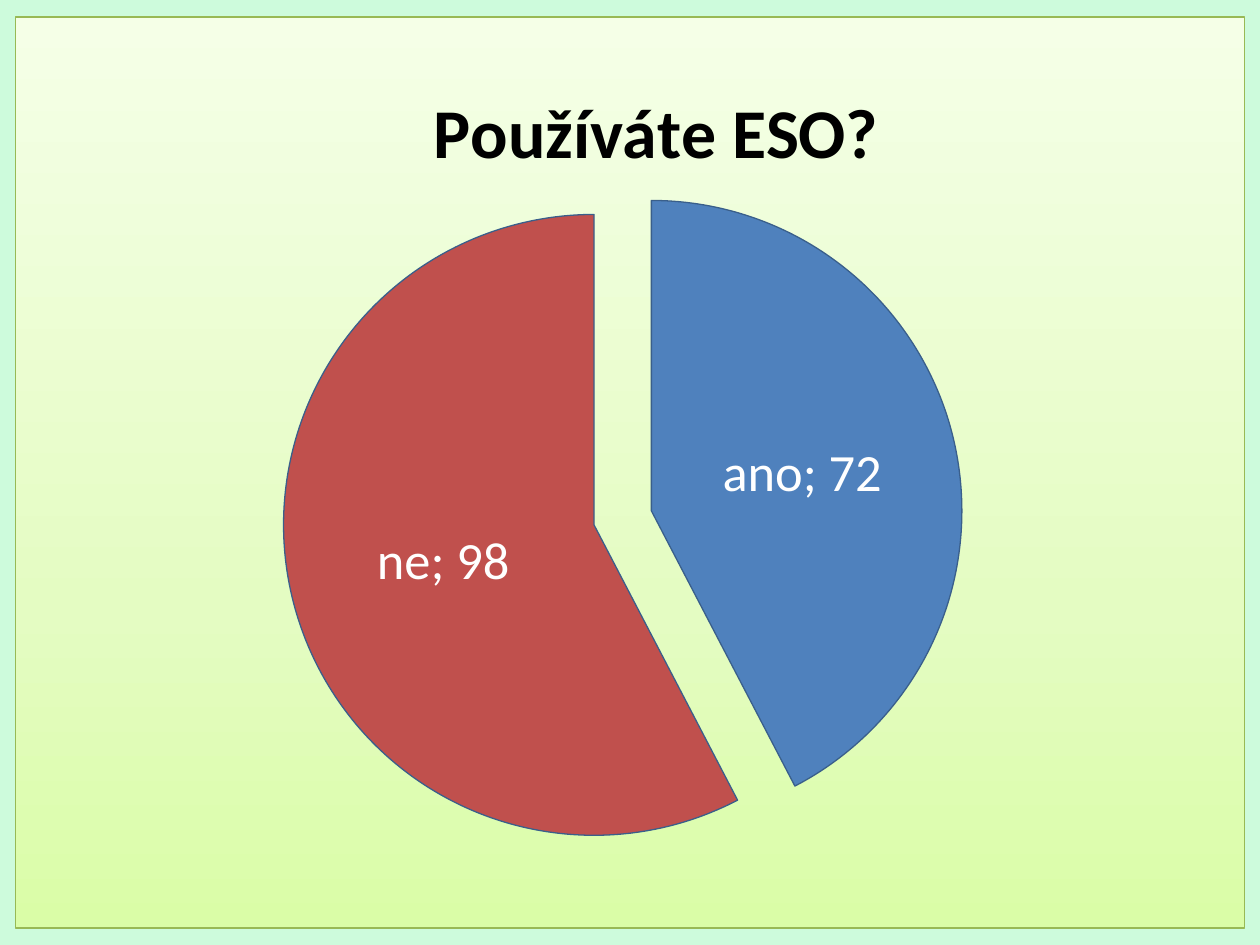
from dataclasses import dataclass

from pptx import Presentation
from pptx.chart.data import CategoryChartData
from pptx.dml.color import RGBColor
from pptx.enum.chart import XL_CHART_TYPE, XL_LABEL_POSITION
from pptx.oxml import parse_xml
from pptx.oxml.ns import qn
from pptx.util import Inches, Pt

PIE = XL_CHART_TYPE.PIE
CENTER = XL_LABEL_POSITION.CENTER
NAMESPACES = (
    'xmlns:c="http://schemas.openxmlformats.org/drawingml/2006/chart" '
    'xmlns:a="http://schemas.openxmlformats.org/drawingml/2006/main"'
)


@dataclass(frozen=True)
class Theme:
    font: str = "Calibri"
    background: str = "CDFBDC"
    text: str = "000000"
    label: str = "FFFFFF"
    slice_line: str = "3A5F8B"
    slices: tuple = ("4F81BD", "C0504D")
    panel_line: str = "98B955"
    panel_stops: tuple = ((0, "DAFDA7"), (35, "E4FCC2"), (100, "F5FFE7"))
    base_size: int = 10
    title_size: int = 40
    label_size: int = 30
    line_width: float = 0.75


THEME = Theme()


def color(value):
    return RGBColor.from_string(value)


def chart_xml(tag, content="", attributes=""):
    return parse_xml(f"<c:{tag} {NAMESPACES} {attributes}>{content}</c:{tag}>")


def manual_layout(x, y, size=None):
    """Layout in fractions of the chart; size is that of the inner plot."""
    parts = '<c:layoutTarget val="inner"/>' if size else ""
    parts += '<c:xMode val="edge"/><c:yMode val="edge"/>'
    parts += f'<c:x val="{x}"/><c:y val="{y}"/>'
    if size:
        parts += f'<c:w val="{size[0]}"/><c:h val="{size[1]}"/>'
    return chart_xml("layout", f"<c:manualLayout>{parts}</c:manualLayout>")


def replace_layout(parent, layout, position):
    for old in parent.findall(qn("c:layout")):
        parent.remove(old)
    parent.insert(position, layout)


def explosion(percent):
    return chart_xml("explosion", attributes=f'val="{percent}"')


def style_panel(chart):
    """Gradient ground and thin border of the whole chart."""
    stops = "".join(
        f'<a:gs pos="{position * 1000}"><a:srgbClr val="{value}"/></a:gs>'
        for position, value in THEME.panel_stops
    )
    panel = chart_xml(
        "spPr",
        f'<a:gradFill><a:gsLst>{stops}</a:gsLst><a:lin ang="16200000" scaled="0"/></a:gradFill>'
        f'<a:ln w="{Pt(THEME.line_width)}"><a:solidFill>'
        f'<a:srgbClr val="{THEME.panel_line}"/></a:solidFill></a:ln>',
    )
    chart.element.find(qn("c:chart")).addnext(panel)


def style_title(chart, text):
    chart.has_title = True
    title = chart.chart_title
    title.text_frame.text = text
    font = title.text_frame.paragraphs[0].runs[0].font
    font.name, font.size, font.bold = THEME.font, Pt(THEME.title_size), True
    font.color.rgb = color(THEME.text)
    replace_layout(title.element, manual_layout(0.33, 0.06), 1)
    title.element.find(qn("c:overlay")).set("val", "1")


def style_slices(series, offsets):
    for index, (fill, offset) in enumerate(zip(THEME.slices, offsets)):
        look = series.points[index].format
        look.fill.solid()
        look.fill.fore_color.rgb = color(fill)
        look.line.color.rgb = color(THEME.slice_line)
        look.line.width = Pt(THEME.line_width)
        point = series._element.findall(qn("c:dPt"))[index]
        point.find(qn("c:spPr")).addprevious(explosion(offset))
    series._element.find(qn("c:dPt")).addprevious(explosion(25))


def style_labels(plot):
    plot.has_data_labels = True
    labels = plot.data_labels
    labels.show_value = labels.show_category_name = True
    labels.show_percentage = False
    labels.position = CENTER
    labels.font.name, labels.font.size = THEME.font, Pt(THEME.label_size)
    labels.font.color.rgb = color(THEME.label)
    last_flag = labels._element.find(qn("c:showBubbleSize"))
    last_flag.addnext(chart_xml("separator", "; "))


def add_answer_pie(page, box):
    answers = CategoryChartData()
    answers.categories = ["ano", "ne"]
    answers.add_series("Series 1", (72, 98))
    chart = page.shapes.add_chart(PIE, *box, answers).chart
    chart.has_legend = False
    chart.font.name, chart.font.size = THEME.font, Pt(THEME.base_size)
    chart.font.color.rgb = color(THEME.text)

    style_panel(chart)
    style_title(chart, "Používáte ESO?")
    plot = chart.plots[0]
    plot.vary_by_categories = True
    style_slices(plot.series[0], offsets=(12, 7))
    style_labels(plot)
    plot_area = chart.element.find(f".//{qn('c:plotArea')}")
    replace_layout(plot_area, manual_layout(0.058, 0.126, (0.86, 0.852)), 0)


def main():
    deck = Presentation()
    deck.slide_width, deck.slide_height = Inches(10), Inches(7.5)
    page = deck.slides.add_slide(deck.slide_layouts[6])
    ground = page.background.fill
    ground.solid()
    ground.fore_color.rgb = color(THEME.background)
    add_answer_pie(page, [Inches(n) for n in (0.12, 0.13, 9.76, 7.24)])
    deck.save("out.pptx")


if __name__ == "__main__":
    main()
